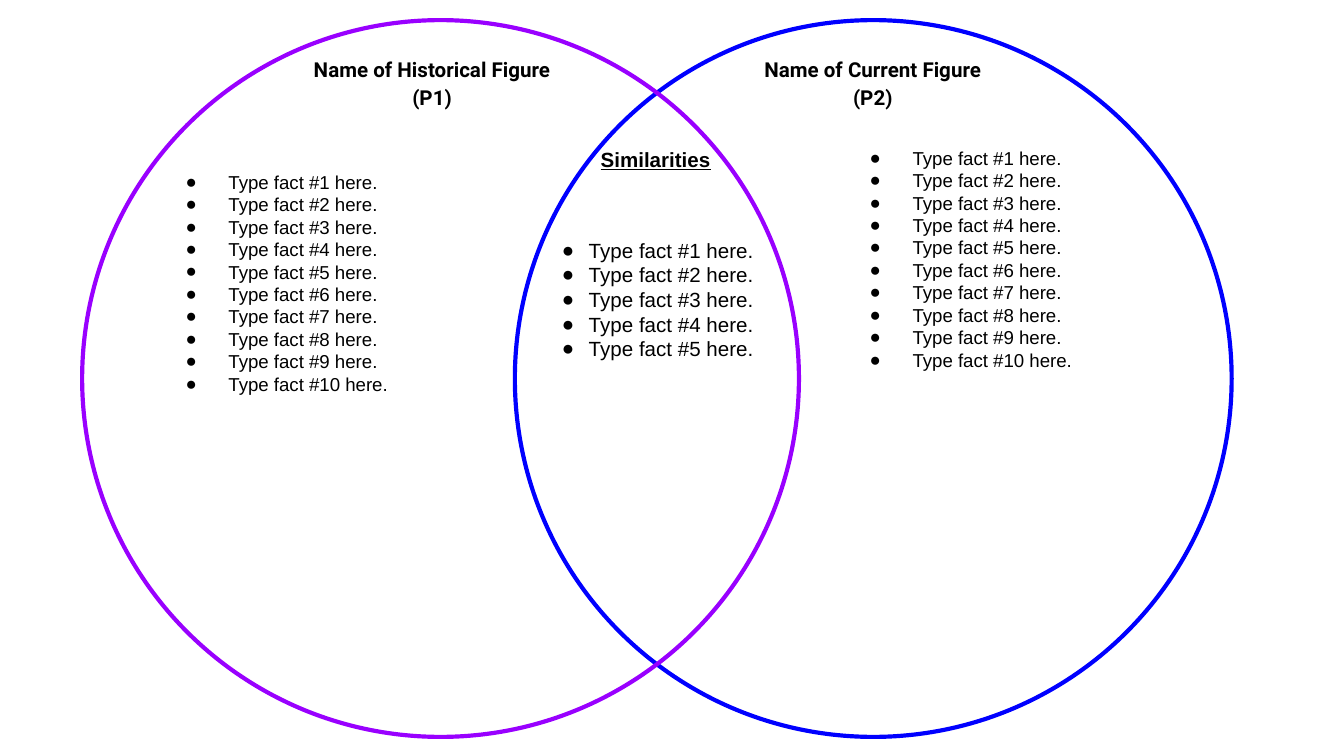
import pptx
import pptx.dml.color
import pptx.enum.shapes
import pptx.enum.text
import pptx.oxml.ns
import pptx.util
from lxml import etree

Pt = pptx.util.Pt
Align = pptx.enum.text.PP_ALIGN
Anchor = pptx.enum.text.MSO_ANCHOR

COLORS = {"text": "000000", "historical": "9900FF", "current": "0000FF"}
CIRCLE_TOP, CIRCLE_SIZE = 10.8, 384


def rgb(name):
    return pptx.dml.color.RGBColor.from_string(COLORS[name])


def add_bullet(paragraph, margin, hanging):
    properties = paragraph._p.get_or_add_pPr()
    properties.set("marL", str(Pt(margin)))
    properties.set("indent", str(-Pt(hanging)))
    qn = pptx.oxml.ns.qn
    bullet_color = etree.SubElement(properties, qn("a:buClr"))
    etree.SubElement(bullet_color, qn("a:srgbClr"), val=COLORS["text"])
    etree.SubElement(properties, qn("a:buFont"), typeface="Arial")
    etree.SubElement(properties, qn("a:buChar"), char="●")


def write_text(holder, box, lines, size=11, font="Arial", bold=False,
               underline=False, align=Align.LEFT, anchor=Anchor.TOP,
               spacing=1.0, bullet=None):
    """Place the holder at box and write one paragraph per line.

    bullet is a pair of text margin and hanging indent.
    """
    holder.left, holder.top, holder.width, holder.height = map(Pt, box)
    frame = holder.text_frame
    frame.word_wrap = True
    frame.auto_size = pptx.enum.text.MSO_AUTO_SIZE.NONE
    frame.vertical_anchor = anchor
    frame.margin_left = frame.margin_right = Pt(7.2)
    frame.margin_top = frame.margin_bottom = Pt(7.2)
    for number, line in enumerate(lines):
        paragraph = frame.add_paragraph() if number else frame.paragraphs[0]
        if bullet:
            add_bullet(paragraph, *bullet)
        paragraph.alignment = align
        paragraph.line_spacing = spacing
        paragraph.space_before = paragraph.space_after = Pt(0)
        run = paragraph.add_run()
        run.text = line
        run.font.name = font
        run.font.size = Pt(size)
        run.font.bold = bold
        run.font.underline = underline
        run.font.color.rgb = rgb("text")


def write_heading(holder, box, heading):
    write_text(holder, box, [heading], font="Roboto", bold=True,
               align=Align.CENTER, anchor=Anchor.MIDDLE, spacing=1.15)


def write_facts(holder, box, count, **text_format):
    facts = [f"Type fact #{number} here." for number in range(1, count + 1)]
    write_text(holder, box, facts, **text_format)


def add_circle(slide, left, color):
    circle = slide.shapes.add_shape(
        pptx.enum.shapes.MSO_SHAPE.OVAL,
        Pt(left), Pt(CIRCLE_TOP), Pt(CIRCLE_SIZE), Pt(CIRCLE_SIZE))
    circle.shadow.inherit = False
    circle.fill.background()
    circle.line.color.rgb = rgb(color)
    circle.line.width = Pt(2.25)


def main():
    deck = pptx.Presentation()
    deck.slide_width, deck.slide_height = Pt(720), Pt(405)
    comparison = deck.slide_layouts.get_by_name("Comparison")
    slide = deck.slides.add_slide(comparison)
    (similarities, historical_name, historical_facts,
     current_name, current_facts) = slide.placeholders

    add_circle(slide, 275.8, "current")
    add_circle(slide, 44, "historical")

    write_heading(current_name, (396.7, 22.3, 141.8, 42.5),
                  "Name of Current Figure (P2)")
    write_heading(historical_name, (154.1, 23, 154.8, 41),
                  "Name of Historical Figure (P1)")
    write_text(similarities, (314.6, 71.3, 77.8, 28), ["Similarities"],
               bold=True, underline=True)

    figure_format = {"size": 10, "bullet": (36, 23)}
    write_facts(historical_facts, (79.2, 84.2, 206.6, 136), 10,
                **figure_format)
    write_facts(current_facts, (445.7, 71.3, 206.6, 136), 10,
                **figure_format)
    shared_facts = slide.shapes.add_textbox(0, 0, 0, 0)
    write_facts(shared_facts, (285.8, 120.2, 128.9, 81.4), 5,
                bullet=(22.5, 14.4))

    deck.save("out.pptx")


if __name__ == "__main__":
    main()
